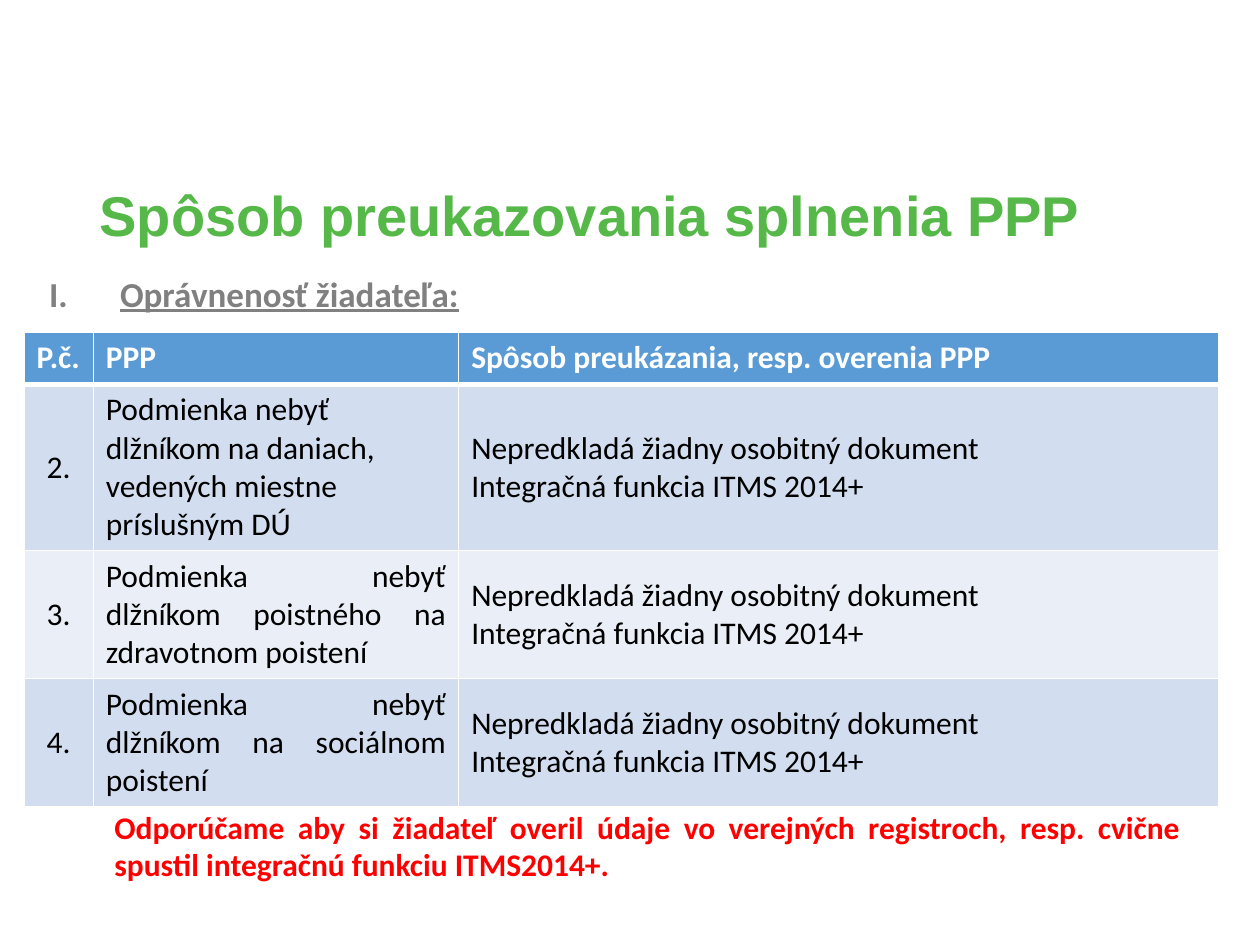
from dataclasses import dataclass

from lxml.etree import SubElement
from pptx import Presentation
from pptx.dml.color import RGBColor
from pptx.enum.text import MSO_ANCHOR, MSO_AUTO_SIZE, PP_ALIGN
from pptx.oxml.ns import qn
from pptx.util import Pt

WHITE, BLACK, RED = "FFFFFF", "000000", "FF0000"
GREEN, GRAY = "55B848", "808080"
HEADER_FILL, BAND_FILLS = "5B9BD5", ("D2DEEF", "EAEFF7")


@dataclass(frozen=True)
class Box:
    left: float
    top: float
    width: float
    height: float


@dataclass(frozen=True)
class TextStyle:
    size: float
    color: str
    bold: bool = False
    underline: bool = False
    font: str = "Calibri"


@dataclass(frozen=True)
class Condition:
    number: str
    text: str
    height: float
    alignment: PP_ALIGN = PP_ALIGN.JUSTIFY


HEADINGS = ("P.č.", "PPP", "Spôsob preukázania, resp. overenia PPP")
PROOF = ("Nepredkladá žiadny osobitný dokument", "Integračná funkcia ITMS 2014+")
CONDITIONS = (
    Condition("2.", "Podmienka nebyť dlžníkom na daniach, vedených miestne príslušným DÚ",
              93.6, PP_ALIGN.LEFT),
    Condition("3.", "Podmienka nebyť dlžníkom poistného na zdravotnom poistení", 72),
    Condition("4.", "Podmienka nebyť dlžníkom na sociálnom poistení", 72),
)
COLUMN_WIDTHS = (39.6, 208.8, 434.2)
HEADER_HEIGHT = 29.5


def rgb(color: str) -> RGBColor:
    return RGBColor.from_string(color)


def place(shape, box: Box) -> None:
    shape.left, shape.top = Pt(box.left), Pt(box.top)
    shape.width, shape.height = Pt(box.width), Pt(box.height)


def write(text_frame, lines: tuple, style: TextStyle, alignment: PP_ALIGN) -> None:
    for index, line in enumerate(lines):
        paragraph = text_frame.add_paragraph() if index else text_frame.paragraphs[0]
        paragraph.alignment = alignment
        run = paragraph.add_run()
        run.text = line
        font = run.font
        font.name, font.size = style.font, Pt(style.size)
        font.bold, font.underline = style.bold, style.underline
        font.color.rgb = rgb(style.color)


def number_roman(paragraph, indent: float) -> None:
    properties = paragraph._p.get_or_add_pPr()
    properties.set("marL", str(Pt(indent)))
    properties.set("indent", str(-Pt(indent)))
    SubElement(properties, qn("a:buFont"), typeface="+mj-lt")
    SubElement(properties, qn("a:buAutoNum"), type="romanUcPeriod")


def format_cell(cell, fill: str, top: float, bottom: float) -> None:
    properties = cell._tc.get_or_add_tcPr()
    for side, width in (("L", 1), ("R", 1), ("T", top), ("B", bottom)):
        line = SubElement(properties, qn(f"a:ln{side}"), w=str(Pt(width)))
        SubElement(SubElement(line, qn("a:solidFill")), qn("a:srgbClr"), val=WHITE)
    cell.fill.solid()
    cell.fill.fore_color.rgb = rgb(fill)


def add_conditions_table(slide, left: float, top: float) -> None:
    heights = (HEADER_HEIGHT, *(condition.height for condition in CONDITIONS))
    table = slide.shapes.add_table(
        len(heights), len(COLUMN_WIDTHS), Pt(left), Pt(top),
        Pt(sum(COLUMN_WIDTHS)), Pt(sum(heights))).table
    for column, width in zip(table.columns, COLUMN_WIDTHS):
        column.width = Pt(width)
    for row, height in zip(table.rows, heights):
        row.height = Pt(height)

    # Header row
    for cell, heading in zip(table.rows[0].cells, HEADINGS):
        format_cell(cell, HEADER_FILL, 1, 3)
        write(cell.text_frame, (heading,), TextStyle(18, WHITE, bold=True), PP_ALIGN.LEFT)

    # One banded row for each condition
    for index, condition in enumerate(CONDITIONS):
        contents = (
            ((condition.number,), PP_ALIGN.CENTER),
            ((condition.text,), condition.alignment),
            (PROOF, PP_ALIGN.LEFT),
        )
        for cell, (lines, alignment) in zip(table.rows[index + 1].cells, contents):
            format_cell(cell, BAND_FILLS[index % 2], 1 if index else 3, 1)
            cell.vertical_anchor = MSO_ANCHOR.MIDDLE
            write(cell.text_frame, lines, TextStyle(18, BLACK), alignment)


def main() -> None:
    presentation = Presentation()
    presentation.slide_width, presentation.slide_height = Pt(720), Pt(540)
    slide = presentation.slides.add_slide(presentation.slide_layouts[1])

    # Title
    title = slide.shapes.title
    place(title, Box(49.7, 90, 620.6, 69.1))
    title.text_frame.auto_size = MSO_AUTO_SIZE.NONE
    title.text_frame.vertical_anchor = MSO_ANCHOR.MIDDLE
    write(title.text_frame, ("Spôsob preukazovania splnenia PPP",),
          TextStyle(32, GREEN, bold=True, font="Arial"), PP_ALIGN.JUSTIFY)
    title.text_frame.paragraphs[0].line_spacing = 0.9

    # Numbered section heading
    section = slide.placeholders[1]
    place(section, Box(20.9, 151.9, 678.2, 31.7))
    section.text_frame.auto_size = MSO_AUTO_SIZE.NONE
    write(section.text_frame, ("Oprávnenosť žiadateľa:",),
          TextStyle(20, GRAY, bold=True, underline=True), PP_ALIGN.JUSTIFY)
    section_paragraph = section.text_frame.paragraphs[0]
    section_paragraph.space_before = Pt(0)
    number_roman(section_paragraph, 40.5)

    add_conditions_table(slide, 13.7, 190.1)

    # Recommendation below the table
    note = slide.shapes.add_textbox(Pt(58.3), Pt(457.9), Pt(623.5), Pt(51.1))
    note.text_frame.word_wrap = True
    write(note.text_frame,
          ("Odporúčame aby si žiadateľ overil údaje vo verejných registroch, "
           "resp. cvične spustil integračnú funkciu ITMS2014+.",),
          TextStyle(18, RED, bold=True), PP_ALIGN.JUSTIFY)

    presentation.save("out.pptx")


if __name__ == "__main__":
    main()
